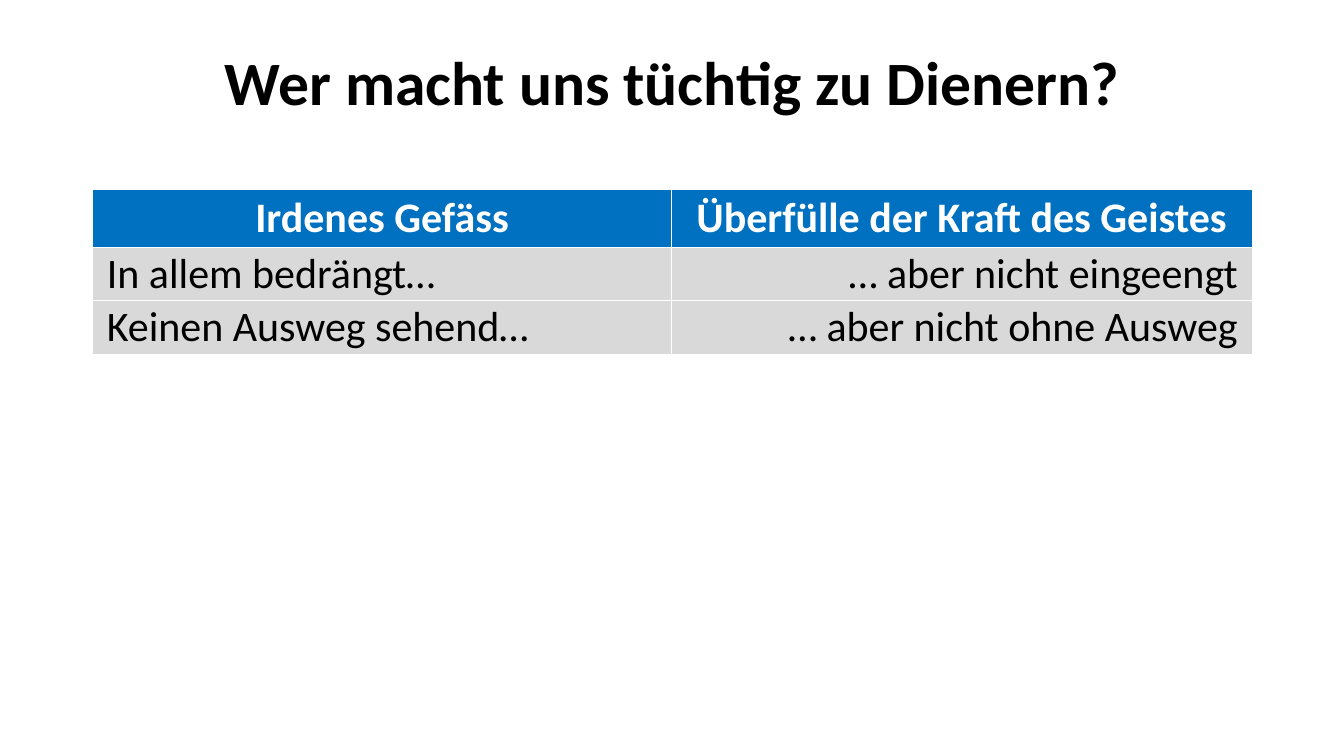
from pptx import Presentation
from pptx.dml.color import RGBColor
from pptx.enum.text import MSO_ANCHOR, PP_ALIGN
from pptx.util import Inches, Pt

# Content
TITLE = "Wer macht uns tüchtig zu Dienern?"
ROWS = [
    ("Irdenes Gefäss", "Überfülle der Kraft des Geistes"),
    ("In allem bedrängt…", "… aber nicht eingeengt"),
    ("Keinen Ausweg sehend…", "… aber nicht ohne Ausweg"),
]

# Layout in inches
WIDTH, HEIGHT = 13.33, 7.5
MARGIN = 0.92
CONTENT_WIDTH = 11.5
TITLE_TOP, TITLE_HEIGHT = 0.4, 0.89
TABLE_TOP = HEIGHT / 4
COLUMN_WIDTHS = (5.74, 5.76)
ROW_HEIGHTS = (0.58, 0.53, 0.53)
CELL_MARGIN = 0.14

# Style
FONT = "Calibri"
BLACK, WHITE, BLUE, GREY = "000000", "FFFFFF", "0070C0", "D9D9D9"
BODY_ALIGNMENTS = (PP_ALIGN.LEFT, PP_ALIGN.RIGHT)


def color(value):
    return RGBColor.from_string(value)


def write(frame, text, size, ink, bold, alignment):
    para = frame.paragraphs[0]
    para.alignment = alignment
    span = para.add_run()
    span.text = text
    span.font.name = FONT
    span.font.size = Pt(size)
    span.font.bold = bold
    span.font.color.rgb = color(ink)
    return para


def add_title(page):
    box = page.shapes.add_textbox(Inches(MARGIN), Inches(TITLE_TOP),
                                  Inches(CONTENT_WIDTH), Inches(TITLE_HEIGHT))
    frame = box.text_frame
    frame.word_wrap = True
    frame.vertical_anchor = MSO_ANCHOR.MIDDLE
    para = write(frame, TITLE, 44, BLACK, True, PP_ALIGN.CENTER)
    para.line_spacing = 0.9


def add_comparison(page):
    table = page.shapes.add_table(
        len(ROWS), len(COLUMN_WIDTHS), Inches(MARGIN), Inches(TABLE_TOP),
        Inches(CONTENT_WIDTH), Inches(sum(ROW_HEIGHTS))).table
    table.horz_banding = False
    for column, width in zip(table.columns, COLUMN_WIDTHS):
        column.width = Inches(width)
    for row, height in zip(table.rows, ROW_HEIGHTS):
        row.height = Inches(height)

    for row_index, texts in enumerate(ROWS):
        header = row_index == 0
        for column_index, text in enumerate(texts):
            cell = table.cell(row_index, column_index)
            cell.fill.solid()
            cell.fill.fore_color.rgb = color(BLUE if header else GREY)
            cell.vertical_anchor = MSO_ANCHOR.MIDDLE
            cell.margin_left = cell.margin_right = Inches(CELL_MARGIN)
            cell.margin_top = cell.margin_bottom = 0
            alignment = PP_ALIGN.CENTER if header else BODY_ALIGNMENTS[column_index]
            write(cell.text_frame, text, 30, WHITE if header else BLACK,
                  header, alignment)


def main():
    deck = Presentation()
    deck.slide_width, deck.slide_height = Inches(WIDTH), Inches(HEIGHT)
    page = deck.slides.add_slide(deck.slide_layouts[6])
    add_title(page)
    add_comparison(page)
    deck.save("out.pptx")


if __name__ == "__main__":
    main()
